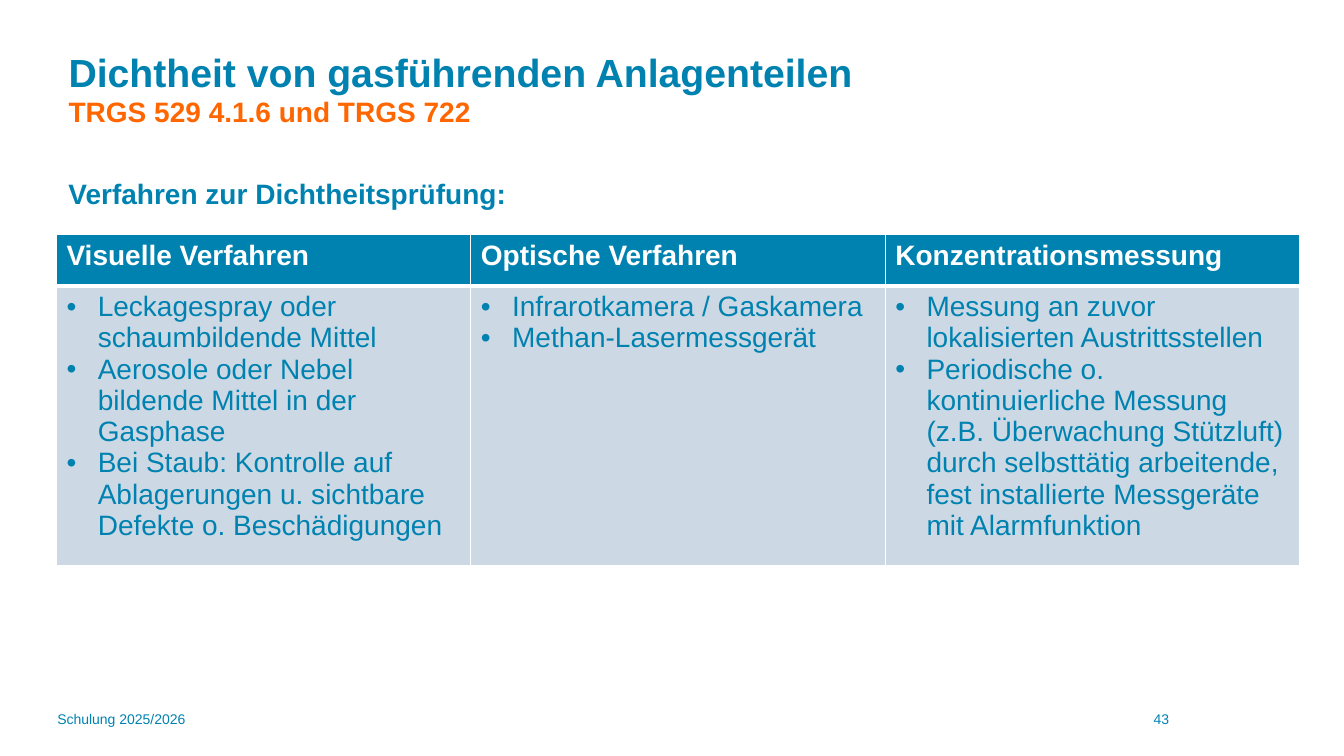
from dataclasses import dataclass

from lxml.etree import SubElement
from pptx import Presentation
from pptx.dml.color import RGBColor
from pptx.enum.text import MSO_ANCHOR, PP_ALIGN
from pptx.oxml.ns import qn
from pptx.util import Emu, Pt

EMU_PER_PX = 9144  # 100 px to the inch


@dataclass(frozen=True)
class Theme:
    font: str = "Arial"
    blue: str = "0082B0"
    orange: str = "FF6600"
    white: str = "FFFFFF"
    cell: str = "CCD8E4"
    title_size: int = 28
    text_size: int = 20
    footer_size: int = 10


THEME = Theme()

METHODS = {
    "Visuelle Verfahren": [
        "Leckagespray oder schaumbildende Mittel",
        "Aerosole oder Nebel bildende Mittel in der Gasphase",
        "Bei Staub: Kontrolle auf Ablagerungen u. sichtbare Defekte o. Beschädigungen",
    ],
    "Optische Verfahren": [
        "Infrarotkamera / Gaskamera",
        "Methan-Lasermessgerät",
    ],
    "Konzentrationsmessung": [
        "Messung an zuvor lokalisierten Austrittsstellen",
        "Periodische o. kontinuierliche Messung (z.B. Überwachung Stützluft) durch "
        "selbsttätig arbeitende, fest installierte Messgeräte mit Alarmfunktion",
    ],
}


def px(length):
    return Emu(length * EMU_PER_PX)


def set_font(font, size, color, bold=False):
    font.name = THEME.font
    font.size = Pt(size)
    font.bold = bold
    font.color.rgb = RGBColor.from_string(color)


def add_title(slide, box, heading, reference):
    title = slide.shapes.title
    title.left, title.top, title.width, title.height = map(px, box)
    frame = title.text_frame
    frame.word_wrap = True
    frame.vertical_anchor = MSO_ANCHOR.MIDDLE
    paragraph = frame.paragraphs[0]
    paragraph.alignment = PP_ALIGN.LEFT
    heading_run = paragraph.add_run()
    heading_run.text = heading
    set_font(heading_run.font, THEME.title_size, THEME.blue, bold=True)
    paragraph.add_line_break()
    reference_run = paragraph.add_run()
    reference_run.text = reference
    set_font(reference_run.font, THEME.text_size, THEME.orange, bold=True)


def add_text(slide, box, text, size, bold=False, alignment=PP_ALIGN.LEFT):
    frame = slide.shapes.add_textbox(*map(px, box)).text_frame
    frame.word_wrap = True
    paragraph = frame.paragraphs[0]
    paragraph.text = text
    paragraph.alignment = alignment
    set_font(paragraph.font, size, THEME.blue, bold)


def add_bullet(paragraph, indent):
    properties = paragraph._p.get_or_add_pPr()
    properties.set("marL", str(px(indent)))
    properties.set("indent", str(-px(indent)))
    SubElement(properties, qn("a:buFont"), typeface=THEME.font)
    SubElement(properties, qn("a:buChar"), char="•")


def style_cell(cell, fill, top=1, bottom=1):
    """Set white borders, widths in points, and the fill."""
    properties = cell._tc.get_or_add_tcPr()
    for side, width in (("L", 1), ("R", 1), ("T", top), ("B", bottom)):
        line = SubElement(properties, qn(f"a:ln{side}"), w=str(Pt(width)))
        solid = SubElement(line, qn("a:solidFill"))
        SubElement(solid, qn("a:srgbClr"), val=THEME.white)
    cell.fill.solid()
    cell.fill.fore_color.rgb = RGBColor.from_string(fill)


def add_methods_table(slide, box, methods, header_height=51, rule=3, indent=31):
    height = box[3]
    table = slide.shapes.add_table(2, len(methods), *map(px, box)).table
    table.horz_banding = False
    table.rows[0].height = px(header_height)
    table.rows[1].height = px(height - header_height)
    for column, (heading, items) in enumerate(methods.items()):
        header, body = table.cell(0, column), table.cell(1, column)
        style_cell(header, THEME.blue, bottom=rule)
        style_cell(body, THEME.cell, top=rule)
        header.text = heading
        set_font(header.text_frame.paragraphs[0].font, THEME.text_size, THEME.white, bold=True)
        body.text = "\n".join(items)
        for paragraph in body.text_frame.paragraphs:
            add_bullet(paragraph, indent)
            set_font(paragraph.font, THEME.text_size, THEME.blue)


def add_footer(slide, box, label, number):
    left, top, width, height = box
    number_width = 278
    add_text(slide, (left, top, 325, height), label, THEME.footer_size)
    add_text(slide, (left + width - number_width, top, number_width, height), number,
             THEME.footer_size, alignment=PP_ALIGN.CENTER)


def main():
    presentation = Presentation()
    presentation.slide_width, presentation.slide_height = px(1333), px(750)
    slide = presentation.slides.add_slide(presentation.slide_layouts.get_by_name("Title Only"))
    add_title(slide, (58, 25, 1034, 125),
              "Dichtheit von gasführenden Anlagenteilen", "TRGS 529 4.1.6 und TRGS 722")
    add_text(slide, (58, 170, 1222, 50), "Verfahren zur Dichtheitsprüfung:",
             THEME.text_size, bold=True)
    add_methods_table(slide, (56, 233, 1233, 307), METHODS)
    add_footer(slide, (47, 700, 1244, 50), "Schulung 2025/2026", "43")
    presentation.save("out.pptx")


if __name__ == "__main__":
    main()
